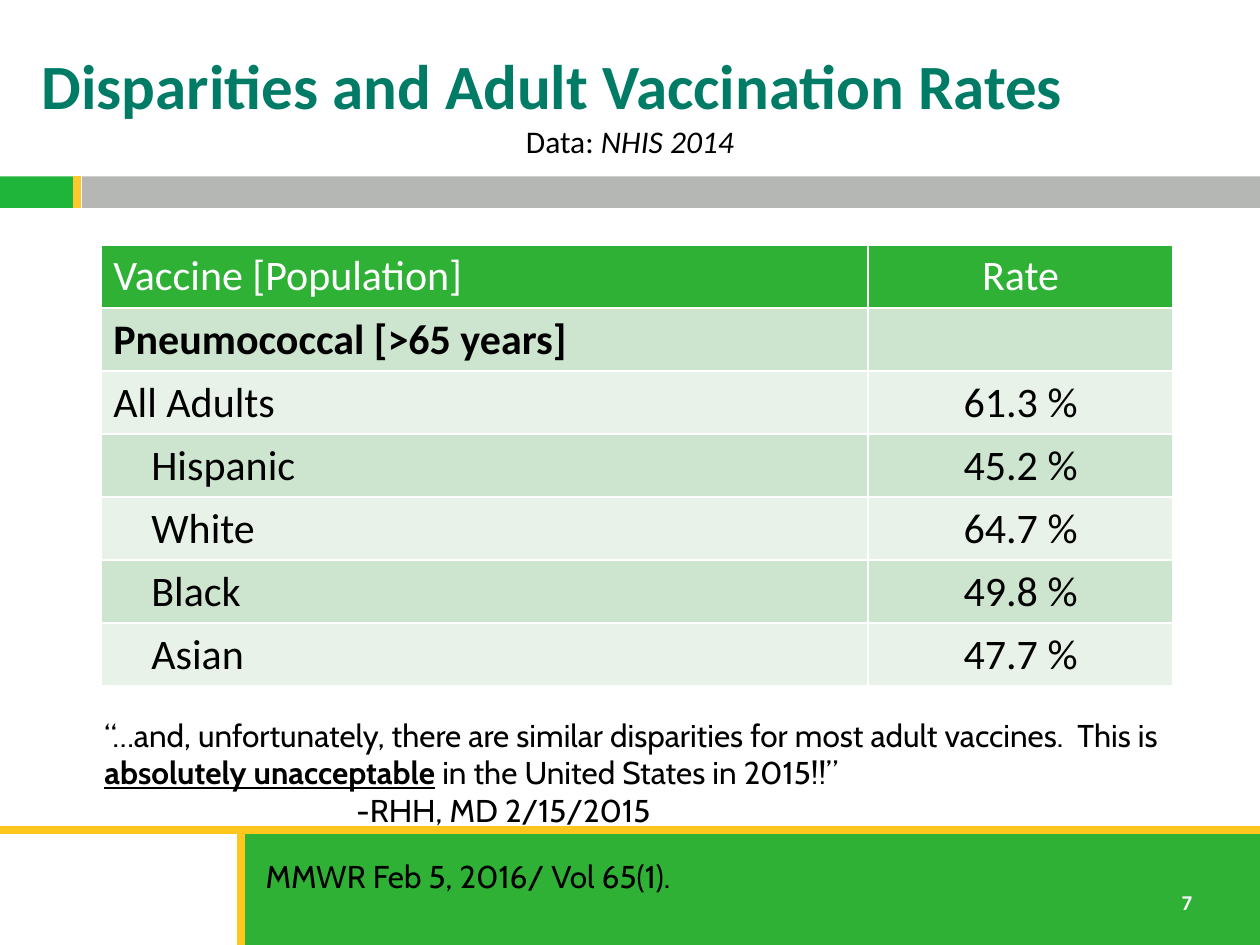
from lxml.etree import SubElement
from pptx import Presentation
from pptx.dml.color import RGBColor
from pptx.enum.shapes import MSO_CONNECTOR, MSO_SHAPE
from pptx.enum.text import MSO_ANCHOR, MSO_AUTO_SIZE, PP_ALIGN
from pptx.oxml.ns import qn
from pptx.util import Pt

WHITE = RGBColor(0xFF, 0xFF, 0xFF)
BLACK = RGBColor(0, 0, 0)
GREEN = RGBColor(0x2E, 0xB1, 0x35)
LEAF = RGBColor(0x1E, 0xB5, 0x3A)
GREY = RGBColor(0xB5, 0xB7, 0xB4)
GOLD = RGBColor(0xFF, 0xC6, 0x1E)
AMBER = RGBColor(0xFF, 0xC8, 0x2E)
TEAL = RGBColor(0x00, 0x7C, 0x66)
BANDS = (RGBColor(0xCD, 0xE4, 0xCE), RGBColor(0xE8, 0xF2, 0xE8))

WIDE, HIGH = 720, 540
INSET, INDENT = 7.2, 21.7
ROW = 36
RATES = [
    # label, rate, is a subgroup
    ("Vaccine [Population]", "Rate", False),
    ("Pneumococcal [>65 years]", "", False),
    ("All Adults", "61.3 %", False),
    ("Hispanic", "45.2 %", True),
    ("White", "64.7 %", True),
    ("Black", "49.8 %", True),
    ("Asian", "47.7 %", True),
]


def style(font, color=BLACK, **values):
    for name, value in values.items():
        setattr(font, name, value)
    font.color.rgb = color


def place(shape, *box):
    for name, value in zip(("left", "top", "width", "height"), box):
        setattr(shape, name, Pt(value))


def add_bar(slide, box, color):
    bar = slide.shapes.add_shape(MSO_SHAPE.RECTANGLE, *map(Pt, box))
    bar.shadow.inherit = False
    bar.fill.solid()
    bar.fill.fore_color.rgb = color
    bar.line.fill.background()


def add_rule(slide, ends, color):
    rule = slide.shapes.add_connector(MSO_CONNECTOR.STRAIGHT, *map(Pt, ends))
    rule.line.color.rgb = color
    rule.line.width = Pt(4.5)
    SubElement(rule._element.spPr, qn("a:effectLst"))


def add_text(slide, box, lines, align=PP_ALIGN.LEFT, wrap=True, **base):
    """Add a text box; each line is a list of (text, format values) runs."""
    frame = slide.shapes.add_textbox(*map(Pt, box)).text_frame
    frame.word_wrap = wrap
    for i, line in enumerate(lines):
        par = frame.paragraphs[0] if i == 0 else frame.add_paragraph()
        par.alignment = align
        for text, values in line:
            run = par.add_run()
            run.text = text
            style(run.font, **{**base, **values})
    return frame


def edge_cell(cell):
    """Draw thin white borders on all four sides."""
    props = cell._tc.get_or_add_tcPr()
    for side in ("lnL", "lnR", "lnT", "lnB"):
        line = SubElement(props, qn(f"a:{side}"), w=str(Pt(1)))
        fill = SubElement(line, qn("a:solidFill"))
        SubElement(fill, qn("a:srgbClr"), val=str(WHITE))


def add_rates(slide):
    box = map(Pt, (57.6, 139.9, 612.7, ROW * len(RATES)))
    table = slide.shapes.add_table(len(RATES), 2, *box).table
    for col, width in zip(table.columns, (438.5, 174.2)):
        col.width = Pt(width)
    for r, (label, rate, sub) in enumerate(RATES):
        table.rows[r].height = Pt(ROW)
        for c, text in enumerate((label, rate)):
            cell = table.cell(r, c)
            edge_cell(cell)
            cell.fill.solid()
            cell.fill.fore_color.rgb = BANDS[(r - 1) % 2] if r else GREEN
            cell.text = text
            par = cell.text_frame.paragraphs[0]
            par.alignment = PP_ALIGN.CENTER if c else PP_ALIGN.LEFT
            style(par.font, WHITE if r == 0 else BLACK, name="Calibri",
                  size=Pt(24), bold=r == 1)
        if sub:
            table.cell(r, 0).margin_left = Pt(INSET + INDENT)


def add_title(slide):
    title = slide.shapes.title
    place(title, 16.6, 20.9, 703.4, 54.7)
    frame = title.text_frame
    frame.text = "Disparities and Adult Vaccination Rates"
    frame.vertical_anchor = MSO_ANCHOR.MIDDLE
    frame.auto_size = MSO_AUTO_SIZE.NONE
    par = frame.paragraphs[0]
    par.alignment = PP_ALIGN.LEFT
    style(par.runs[0].font, TEAL, name="Calibri", size=Pt(36), bold=True)


def add_frame(slide):
    """Draw the header band and the footer."""
    band, foot, side = 100.8, 474.5, 137.5
    for box, color in (
        ((0, 97.2, WIDE, 25.2), WHITE),
        ((0, band, 41.8, 18), LEAF),
        ((46.8, band, WIDE - 46.8, 18), GREY),
        ((side, foot, WIDE - side, HIGH - foot), GREEN),
    ):
        add_bar(slide, box, color)
    for ends, color in (
        ((0, foot, WIDE, foot), GOLD),
        ((side, foot, side, HIGH), GOLD),
        ((44.2, band, 44.2, band + 18), AMBER),
    ):
        add_rule(slide, ends, color)
    add_text(slide, (668.2, 504.7, 28.8, 21.6), [[("7", {})]], wrap=False,
             color=WHITE, name="Calibri", size=Pt(12), bold=True)


def main():
    deck = Presentation()
    deck.slide_width, deck.slide_height = Pt(WIDE), Pt(HIGH)
    slide = deck.slides.add_slide(deck.slide_layouts[5])
    add_frame(slide)
    add_rates(slide)
    add_title(slide)
    add_text(slide, (0, 66.2, WIDE, 28.8),
             [[("Data: ", {}), ("NHIS 2014", {"italic": True})]],
             PP_ALIGN.CENTER, name="Calibri", size=Pt(18))
    cabin = {"name": "Cabin", "size": Pt(18)}
    add_text(slide, (144.7, 486, 373, 28.8),
             [[("MMWR Feb 5, 2016/ Vol 65(1).", {})]], **cabin)
    quote = add_text(slide, (52.6, 405.4, 616.3, 72.7), [
        [("“…and, unfortunately, there are similar disparities for most "
          "adult vaccines.  This is ", {}),
         ("absolutely unacceptable", {"bold": True, "underline": True}),
         (" in the United States in 2015!!”", {})],
        [("-RHH, MD 2/15/2015", {})],
    ], **cabin)
    quote.paragraphs[1]._p.get_or_add_pPr().set("marL", str(Pt(144)))
    deck.save("out.pptx")


if __name__ == "__main__":
    main()
